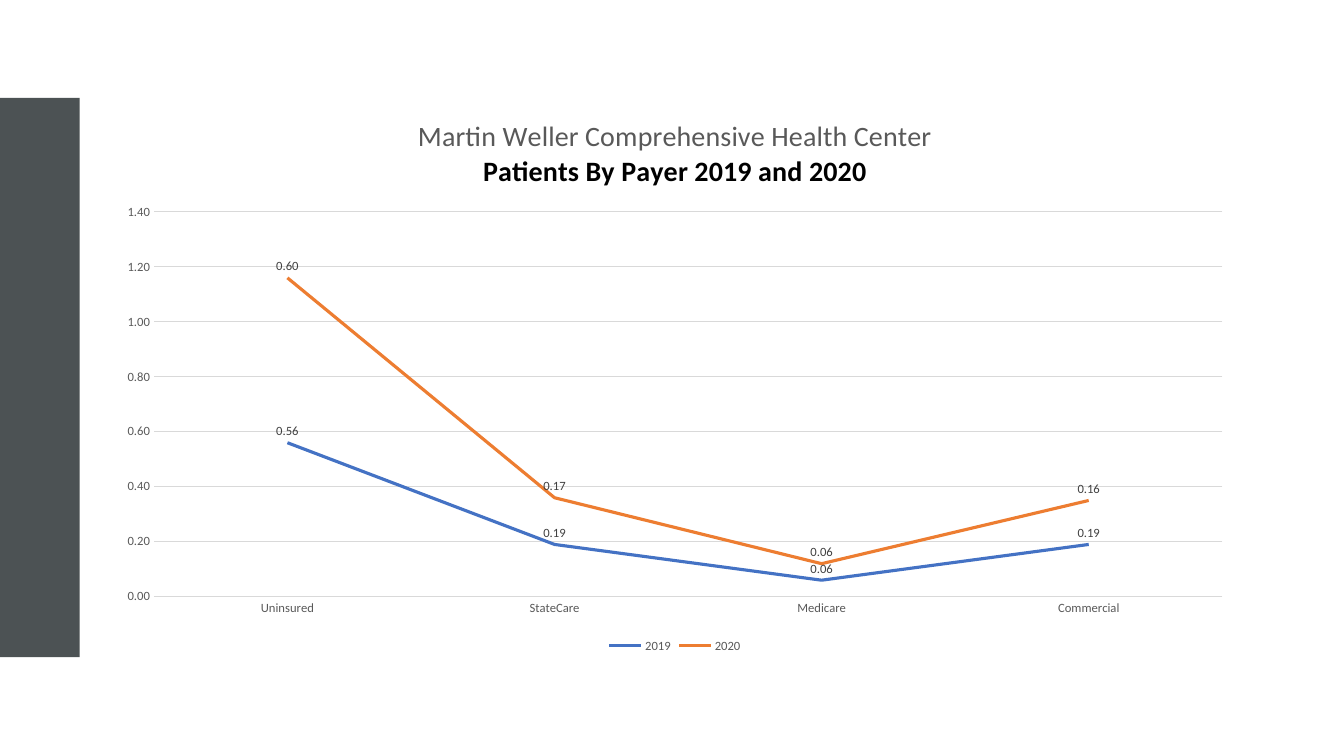
from pptx import Presentation
from pptx.chart.data import CategoryChartData
from pptx.dml.color import RGBColor
from pptx.enum.chart import XL_CHART_TYPE, XL_LABEL_POSITION, XL_LEGEND_POSITION, XL_TICK_MARK
from pptx.enum.shapes import MSO_SHAPE
from pptx.oxml import parse_xml
from pptx.oxml.ns import nsdecls, qn
from pptx.util import Inches, Pt

LINE_STACKED = XL_CHART_TYPE.LINE_STACKED
LABEL_ABOVE = XL_LABEL_POSITION.ABOVE
LEGEND_BOTTOM = XL_LEGEND_POSITION.BOTTOM
NO_TICK = XL_TICK_MARK.NONE
RECTANGLE = MSO_SHAPE.RECTANGLE

COLORS = {
    "band": "4C5254",
    "grid": "D9D9D9",
    "muted": "595959",
    "label": "404040",
    "title": "000000",
    "2019": "4472C4",
    "2020": "ED7D31",
}
PAYERS = ["Uninsured", "StateCare", "Medicare", "Commercial"]
SHARES = {"2019": [0.56, 0.19, 0.06, 0.19], "2020": [0.60, 0.17, 0.06, 0.16]}
TITLE_LINES = [
    ("Martin Weller Comprehensive Health Center", "muted", False),
    ("Patients By Payer 2019 and 2020", "title", True),
]
PLOT_SHARES = {"x": 0.043, "y": 0.204, "w": 0.937, "h": 0.688}


def color(name):
    return RGBColor.from_string(COLORS[name])


def style_font(font, size, name, bold=False):
    font.name = "Calibri"
    font.size = Pt(size)
    font.bold = bold
    font.color.rgb = color(name)


deck = Presentation()
deck.slide_width, deck.slide_height = Inches(13.33), Inches(7.5)
page = deck.slides.add_slide(deck.slide_layouts[6])
top, height = Inches(0.97), Inches(5.55)

# Side band
band = page.shapes.add_shape(RECTANGLE, 0, top, Inches(0.79), height)
band.shadow.inherit = False
band.fill.solid()
band.fill.fore_color.rgb = color("band")
band.line.fill.background()

# Chart
data = CategoryChartData(number_format="0.00")
data.categories = PAYERS
for year, shares in SHARES.items():
    data.add_series(year, shares)
chart = page.shapes.add_chart(
    LINE_STACKED, Inches(1.04), top, Inches(11.31), height, data
).chart
style_font(chart.font, 10, "title")

# Title
title = chart.chart_title
title.include_in_layout = False
title_frame = title.text_frame
for index, (line, name, bold) in enumerate(TITLE_LINES):
    para = title_frame.add_paragraph() if index else title_frame.paragraphs[0]
    span = para.add_run()
    span.text = line
    style_font(span.font, 20, name, bold)

# Legend
chart.has_legend = True
chart.legend.position = LEGEND_BOTTOM
chart.legend.include_in_layout = False
style_font(chart.legend.font, 9, "muted")

# Axes
for axis in (chart.category_axis, chart.value_axis):
    axis.major_tick_mark = axis.minor_tick_mark = NO_TICK
    style_font(axis.tick_labels.font, 9, "muted")
shares_axis = chart.value_axis
shares_axis.minimum_scale, shares_axis.maximum_scale, shares_axis.major_unit = 0, 1.4, 0.2
shares_axis.tick_labels.number_format = "0.00"
shares_axis.tick_labels.number_format_is_linked = False
shares_axis.format.line.fill.background()
shares_axis.has_major_gridlines = True
for line in (chart.category_axis.format.line, shares_axis.major_gridlines.format.line):
    line.color.rgb = color("grid")
    line.width = Pt(0.75)

# Series
for series in chart.plots[0].series:
    series.smooth = False
    series.format.line.color.rgb = color(series.name)
    series.format.line.width = Pt(2.25)
    labels = series.data_labels
    labels.show_value = True
    labels.position = LABEL_ABOVE
    labels.number_format = "0.00"
    labels.number_format_is_linked = False
    style_font(labels.font, 9, "label")

# Plot area as shares of the chart's size
plot_area = chart.plots[0]._element.getparent()
for layout in plot_area.findall(qn("c:layout")):
    plot_area.remove(layout)
sides = "".join(f'<c:{side} val="{share}"/>' for side, share in PLOT_SHARES.items())
plot_area.insert(0, parse_xml(
    f'<c:layout {nsdecls("c")}><c:manualLayout><c:layoutTarget val="inner"/>'
    f'<c:xMode val="edge"/><c:yMode val="edge"/>{sides}</c:manualLayout></c:layout>'
))

deck.save("out.pptx")
